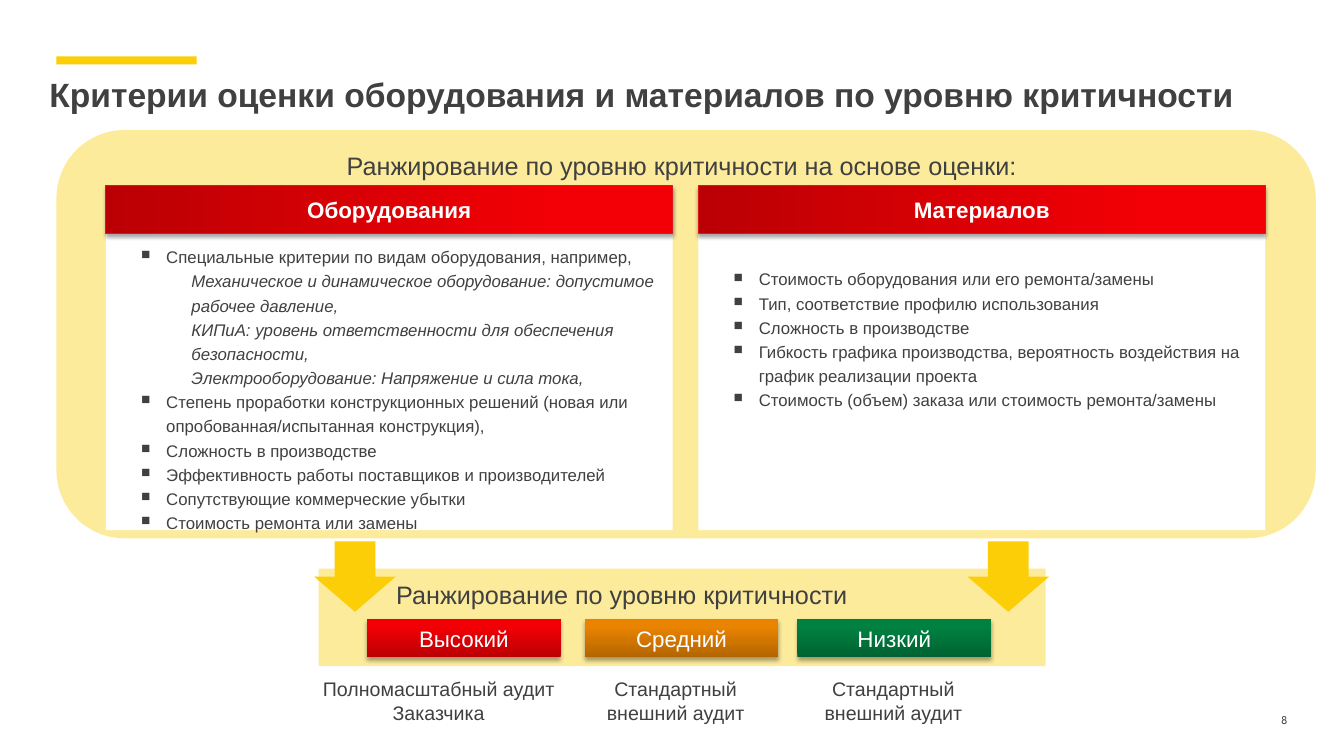
"""Build the slide on criticality criteria for equipment and materials."""
import pptx
import pptx.util
import pptx.dml.color
import pptx.enum.shapes
import pptx.enum.text
import lxml.etree

WIDE, HIGH = 13.33, 7.5
HUES = {"gold": "FBCE07", "cream": "FDEB9C", "ink": "404040", "white": "FFFFFF", "edge": "DD181C"}
FADES = {"red": ("BA0004", "F20005"), "amber": ("B36500", "E98300"), "green": ("006232", "008041")}

TITLE = "Критерии оценки оборудования и материалов по уровню критичности"
BASIS = "Ранжирование по уровню критичности на основе оценки:"
RANK = "Ранжирование по уровню критичности"
PAGE = "8"
BULLET, DETAIL = 1, 2
PANELS = [
    (7.88, "Оборудования", 0.1, [
        (BULLET, "Специальные критерии по видам оборудования, например,"),
        (DETAIL, "Механическое и динамическое оборудование: допустимое рабочее давление,"),
        (DETAIL, "КИПиА: уровень ответственности для обеспечения безопасности,"),
        (DETAIL, "Электрооборудование: Напряжение и сила тока,"),
        (BULLET, "Степень проработки конструкционных решений "
                 "(новая или опробованная/испытанная конструкция),"),
        (BULLET, "Сложность в производстве"),
        (BULLET, "Эффективность работы поставщиков и производителей"),
        (BULLET, "Сопутствующие коммерческие убытки"),
        (BULLET, "Стоимость ремонта или замены"),
    ]),
    (51.97, "Материалов", 0.32, [
        (BULLET, "Стоимость оборудования или его ремонта/замены"),
        (BULLET, "Тип, соответствие профилю использования"),
        (BULLET, "Сложность в производстве"),
        (BULLET, "Гибкость графика производства, вероятность воздействия "
                 "на график реализации проекта"),
        (BULLET, "Стоимость (объем) заказа или стоимость ремонта/замены"),
    ]),
]
LEVELS = [
    (27.31, "Высокий", "red", 23.49, 18.3, "Полномасштабный аудит Заказчика"),
    (43.51, "Средний", "amber", 43.07, 14.4, "Стандартный внешний аудит"),
    (59.34, "Низкий", "green", 59.27, 14.4, "Стандартный внешний аудит"),
]
ARROWS = [23.37, 71.98]

KIND = pptx.enum.shapes.MSO_SHAPE
ALIGN = pptx.enum.text.PP_ALIGN
ANCHOR = pptx.enum.text.MSO_ANCHOR
INCH = pptx.util.Inches

deck = pptx.Presentation()
deck.slide_width, deck.slide_height = INCH(WIDE), INCH(HIGH)
slide = deck.slides.add_slide(deck.slide_layouts[6])


def color(name):
    return pptx.dml.color.RGBColor.from_string(HUES.get(name, name))


def place(x, y, w, h):
    """Turn percentages of the slide into lengths."""
    return [INCH(part * side / 100) for part, side in zip((x, y, w, h), (WIDE, HIGH) * 2)]


def node(home, tag, **keys):
    return lxml.etree.SubElement(home, pptx.oxml.ns.qn(tag), keys)


def draw(kind, fill, *spot):
    shape = slide.shapes.add_shape(kind, *place(*spot))
    shape.shadow.inherit = False
    shape.line.fill.background()
    shape.fill.solid()
    shape.fill.fore_color.rgb = color(fill)
    return shape


def glow(fade, angle, *spot):
    """Draw a bar with a gradient and a soft shadow."""
    shape = draw(KIND.RECTANGLE, "white", *spot)
    shape.fill.gradient()
    shape.fill.gradient_angle = angle
    for stop, at, tone in zip(shape.fill.gradient_stops, (0, 0.8), FADES[fade]):
        stop.position, stop.color.rgb = at, color(tone)
    glows = shape._element.spPr.find(pptx.oxml.ns.qn("a:effectLst"))
    shade = node(glows, "a:outerShdw", blurRad="39370", dist="22860", dir="5400000", rotWithShape="0")
    node(node(shade, "a:srgbClr", val="000000"), "a:alpha", val="35000")
    return shape


def write(shape, lines, size=12, font="Arial", hue="ink", bold=False, align=ALIGN.LEFT,
          anchor=ANCHOR.TOP, space=None, pad=(0, 0, 0, 0), wrap=True):
    """Fill a shape with (level, text) lines; level 0 is plain."""
    frame = shape.text_frame
    frame.word_wrap, frame.vertical_anchor = wrap, anchor
    (frame.margin_left, frame.margin_top,
     frame.margin_right, frame.margin_bottom) = map(INCH, pad)
    for row, (level, words) in enumerate(lines):
        para = frame.add_paragraph() if row else frame.paragraphs[0]
        para.level, para.alignment = level, align
        if level:
            props = para._p.get_or_add_pPr()
            props.set("marL", str(INCH(0.25 + 0.25 * level)))
            props.set("indent", str(INCH(-0.25 if level == BULLET else 0)))
            if level == BULLET:
                node(node(props, "a:buClr"), "a:srgbClr", val=HUES["ink"])
                node(props, "a:buSzPct", val="75000")
                node(props, "a:buChar", char="■")
            else:
                node(props, "a:buNone")
        if space:
            para.line_spacing = space
        run = para.add_run()
        run.text = words
        run.font.size, run.font.name = pptx.util.Pt(size), font
        run.font.bold, run.font.italic = bold, level == DETAIL
        run.font.color.rgb = color(hue)


def label(words, *spot, **style):
    write(slide.shapes.add_textbox(*place(*spot)), [(0, words)], **style)


def main():
    draw(KIND.RECTANGLE, "gold", 4.2, 7.47, 10.43, 1.07)
    draw(KIND.RECTANGLE, "cream", 23.71, 75.2, 54.09, 12.93)
    draw(KIND.ROUNDED_RECTANGLE, "cream", 4.2, 17.2, 93.7, 54)
    label(TITLE, 3.68, 9.73, 93.7, 10.93, size=24, bold=True)
    label(BASIS, 25.06, 19.2, 51.84, 5.33, size=18, pad=(0.1, 0.05, 0, 0.05))

    middle = {"align": ALIGN.CENTER, "anchor": ANCHOR.MIDDLE, "size": 16, "hue": "white"}
    for x, name, top, items in PANELS:
        body = draw(KIND.RECTANGLE, "white", x, 30.8, 42.16, 39.33)
        write(body, items, space=1.2, pad=(0.1, top, 0.1, 0.1))
        head = glow("red", 0, x, 24.6, 42.16, 6.27)
        head.line.color.rgb, head.line.width = color("edge"), pptx.util.Pt(0.75)
        write(head, [(0, name)], bold=True, **middle)

    for x in ARROWS:
        draw(KIND.DOWN_ARROW, "gold", x, 71.6, 6.08, 9.33)
    label(RANK, 29.48, 75.07, 42.54, 5.07, size=18, space=1.4)

    for x, name, fade, left, wide, audit in LEVELS:
        write(glow(fade, 90, x, 81.9, 14.4, 5.07), [(0, name)], **middle)
        label(audit, left, 89.6, wide, 4.27, size=14, align=ALIGN.CENTER)
    label(PAGE, 92.87, 94.27, 2.93, 3.47, size=8.5, font="League Spartan",
          align=ALIGN.RIGHT, wrap=False, pad=(0, 0, 0, 0.05))
    deck.save("out.pptx")


if __name__ == "__main__":
    main()
